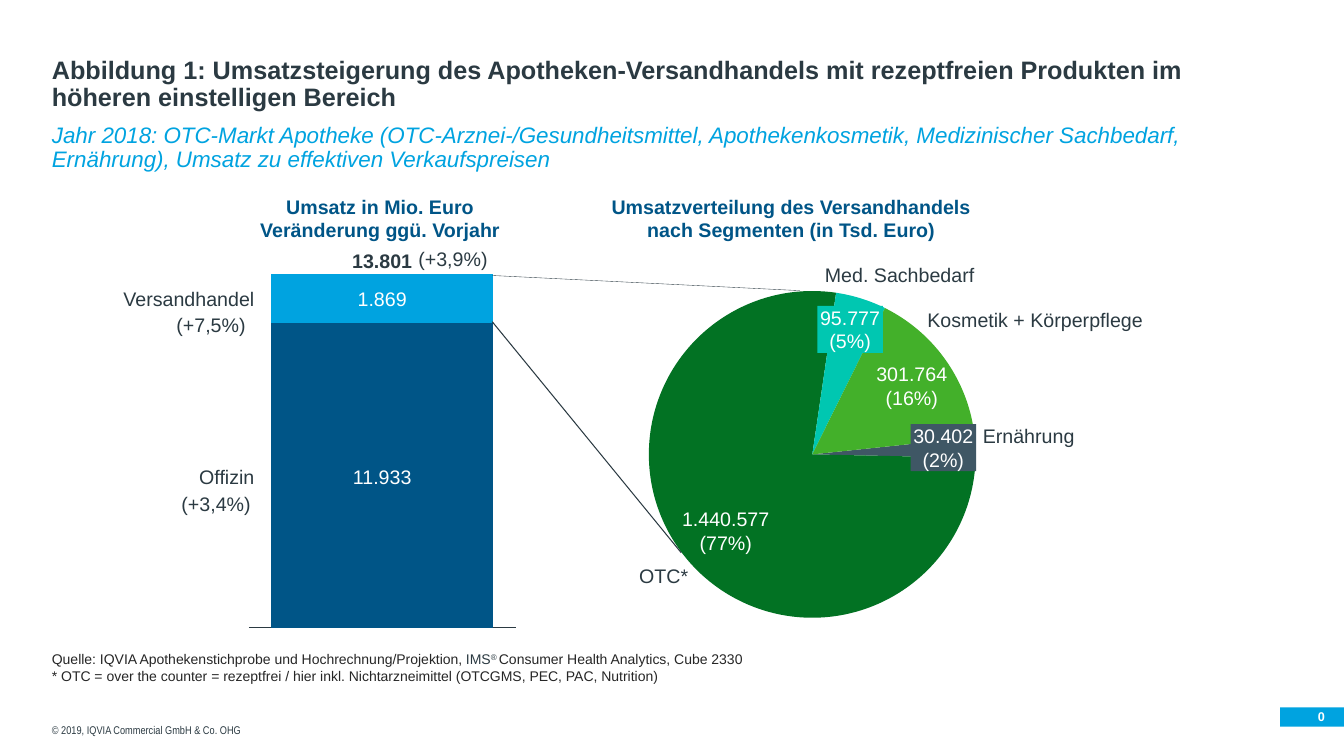
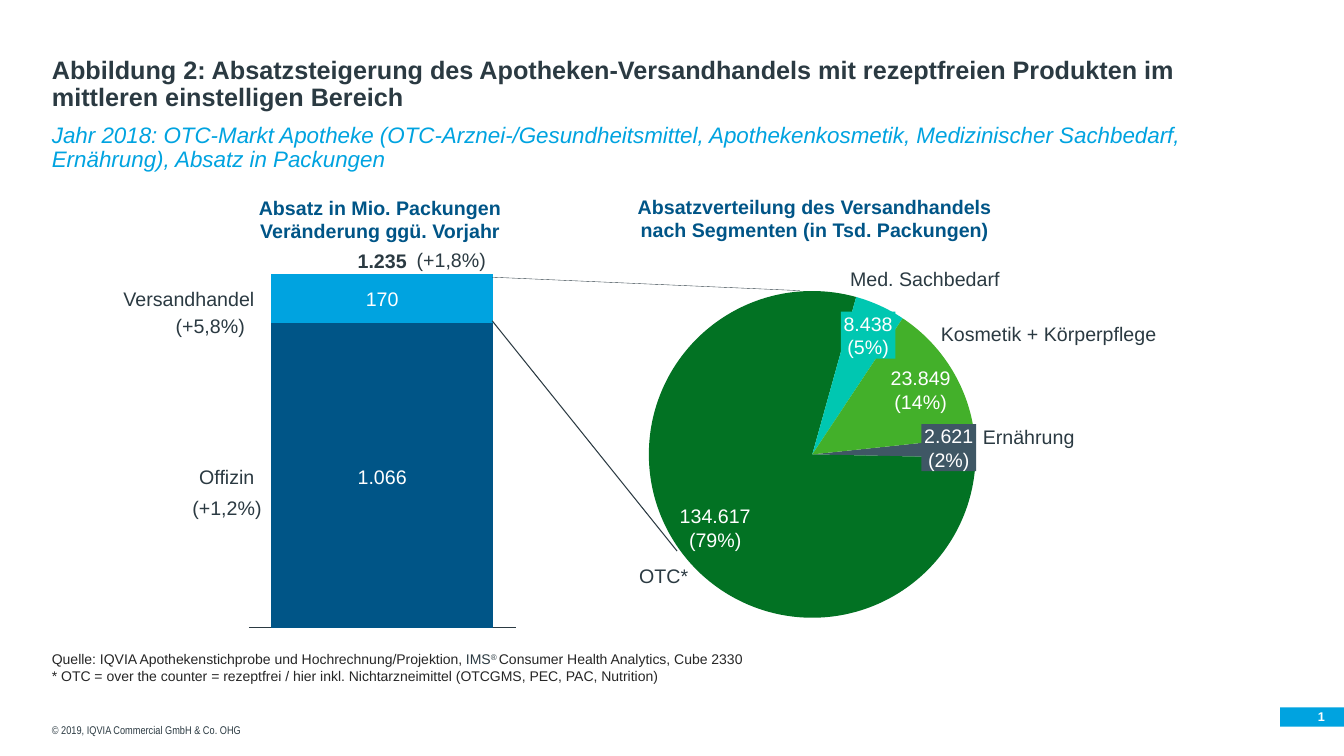
import dataclasses

import pptx
import pptx.chart.data
import pptx.dml.color
import pptx.enum.chart
import pptx.enum.shapes
import pptx.enum.text
import pptx.oxml
import pptx.oxml.ns
import pptx.util

COLUMNS, ROWS = 160, 90
WIDTH, HEIGHT = pptx.util.Inches(13.33), pptx.util.Inches(7.5)
DARK, GREY, WHITE = "2B3A42", "262626", "FFFFFF"
SKY, NAVY = "00A3E0", "005587"
SLATE, FOREST, TEAL, GREEN = "3F5765", "027223", "00C7B1", "43B02A"
SEGMENT_COLORS = (SLATE, FOREST, TEAL, GREEN)
SEGMENT_NAMES = ("Ernährung", "OTC*", "Med. Sachbedarf", "Kosmetik + Körperpflege")
LINE_ROWS = 2.8
ALIGN = pptx.enum.text.PP_ALIGN
ANCHOR = pptx.enum.text.MSO_ANCHOR


@dataclasses.dataclass(frozen=True)
class Box:
    """An area in grid columns and rows."""

    left: float
    top: float
    width: float
    height: float

    def inside(self, left, top, width, height):
        """Return an area placed from this area's top left corner."""
        return Box(self.left + left, self.top + top, width, height)

    def lengths(self):
        """Return the area as slide lengths."""
        return (across(self.left), down(self.top),
                across(self.width), down(self.height))


TITLE = Box(5, 3.8, 148.8, 10.1)
SUBTITLE = Box(5, 14.2, 148.8, 5.3)
SOURCE = Box(5, 76.9, 115.2, 4.7)
COPYRIGHT = Box(5, 83.9, 119.6, 4.4)
BADGE = Box(152.4, 84.2, 7.6, 2.3)
BARS = Box(28.6, 31.7, 33.8, 44.4)
PIE = Box(76, 33.4, 41.4, 41.4)


@dataclasses.dataclass(frozen=True)
class Change:
    """A growth figure and its place in the column region."""

    text: str
    left: float
    top: float


@dataclasses.dataclass(frozen=True)
class Segment:
    """A pie segment with the places of its value and its name."""

    share: int
    value: str
    value_place: tuple
    name_place: tuple


def across(columns):
    """Turn grid columns into a length."""
    return round(WIDTH * columns / COLUMNS)


def down(rows):
    """Turn grid rows into a length."""
    return round(HEIGHT * rows / ROWS)


def color(value):
    """Turn a hex string into a colour."""
    return pptx.dml.color.RGBColor.from_string(value)


def paint(fill, value):
    """Give a fill one solid colour."""
    fill.solid()
    fill.fore_color.rgb = color(value)


def add_run(paragraph, text, size=14, ink=DARK, bold=False, italic=False,
            name="Arial"):
    """Add one styled run and return it."""
    run = paragraph.add_run()
    run.text = text
    run.font.size = pptx.util.Pt(size)
    run.font.name = name
    run.font.bold = bold
    run.font.italic = italic
    run.font.color.rgb = color(ink)
    return run


def add_text(slide, box, lines, align=ALIGN.LEFT, anchor=ANCHOR.MIDDLE, fill=None,
             inset=(0, 0, 0, 0), spacing=None, **style):
    """Add lines of text, on a filled rectangle if a fill is given."""
    if fill:
        shape = slide.shapes.add_shape(
            pptx.enum.shapes.MSO_SHAPE.RECTANGLE, *box.lengths())
        shape.shadow.inherit = False
        paint(shape.fill, fill)
        shape.line.fill.background()
    else:
        shape = slide.shapes.add_textbox(*box.lengths())
    frame = shape.text_frame
    frame.word_wrap = True
    frame.vertical_anchor = anchor
    (frame.margin_left, frame.margin_top,
     frame.margin_right, frame.margin_bottom) = map(pptx.util.Inches, inset)
    for index, line in enumerate(lines):
        paragraph = frame.add_paragraph() if index else frame.paragraphs[0]
        paragraph.alignment = align
        if spacing:
            paragraph.line_spacing = spacing
        add_run(paragraph, line, **style)
    return shape


def add_line(slide, start, end, weight):
    """Add a straight line between two grid points."""
    line = slide.shapes.add_connector(
        pptx.enum.shapes.MSO_CONNECTOR.STRAIGHT,
        across(start[0]), down(start[1]), across(end[0]), down(end[1]))
    line.line.color.rgb = color(DARK)
    line.line.width = pptx.util.Pt(weight)
    properties = line.element.spPr
    properties.append(pptx.oxml.parse_xml(
        f'<a:effectLst {pptx.oxml.ns.nsdecls("a")}/>'))


def add_chart(slide, box, kind, categories, series, plot_area):
    """Add a plain chart with a fixed inner plot area."""
    data = pptx.chart.data.CategoryChartData()
    data.categories = categories
    for index, values in enumerate(series, 1):
        data.add_series(f"Series {index}", values)
    chart = slide.shapes.add_chart(kind, *box.lengths(), data).chart
    chart.has_legend = False
    chart.has_title = False
    chart.font.name = "Arial"
    chart.font.size = pptx.util.Pt(10)
    chart.font.color.rgb = color(DARK)
    area = chart.element.xpath("//c:plotArea")[0]
    for layout in area.xpath("./c:layout"):
        area.remove(layout)
    settings = [("layoutTarget", "inner"), ("xMode", "edge"), ("yMode", "edge")]
    settings += zip("xywh", plot_area)
    inner = "".join(f'<c:{tag} val="{value}"/>' for tag, value in settings)
    area.insert(0, pptx.oxml.parse_xml(
        f'<c:layout {pptx.oxml.ns.nsdecls("c")}>'
        f'<c:manualLayout>{inner}</c:manualLayout></c:layout>'))
    return chart


def add_frame(slide, title, subtitle, number):
    """Add the title, subtitle, source, copyright line and number badge."""
    inset = (0.1, 0.05, 0.1, 0.05)
    add_text(slide, SUBTITLE, [subtitle], anchor=ANCHOR.TOP, inset=inset,
             spacing=0.9, size=16, ink=SKY, italic=True)
    add_text(slide, TITLE, [title], anchor=ANCHOR.BOTTOM, inset=inset,
             spacing=0.9, size=18, bold=True)
    add_text(slide, COPYRIGHT, ["© 2019, IQVIA Commercial GmbH & Co. OHG"],
             anchor=ANCHOR.BOTTOM, fill=WHITE, inset=inset, size=8,
             name="Arial Narrow")
    add_text(slide, BADGE, [str(number)], ALIGN.RIGHT, fill=SKY,
             inset=(0, 0, 0.19, 0), size=9, ink=WHITE, bold=True)
    source = add_text(
        slide, SOURCE,
        ["Quelle: IQVIA Apothekenstichprobe und Hochrechnung/Projektion, ",
         "* OTC = over the counter = rezeptfrei / hier inkl. Nichtarzneimittel "
         "(OTCGMS, PEC, PAC, Nutrition)"],
        anchor=ANCHOR.TOP, inset=inset, size=10, ink=GREY)
    paragraph = source.text_frame.paragraphs[0]
    add_run(paragraph, "IMS", size=10)
    mark = add_run(paragraph, "® ", size=10)
    mark.font._element.set("baseline", "30000")
    add_run(paragraph, "Consumer Health Analytics, Cube 2330", size=10, ink=GREY)


def add_columns(slide, box, headline, headline_top, values, total, changes):
    """Add the stacked column with its headline, values and growth figures."""
    chart = add_chart(slide, box, pptx.enum.chart.XL_CHART_TYPE.COLUMN_STACKED,
                      ["1"], [[100], [16]], (0.03, 0.02, 0.94, 0.95))
    plot = chart.plots[0]
    plot.gap_width, plot.overlap, plot.vary_by_categories = 20, 100, False
    for series, fill in zip(plot.series, (NAVY, SKY)):
        paint(series.format.fill, fill)
    chart.value_axis.visible = False
    chart.value_axis.has_major_gridlines = False
    chart.value_axis.minimum_scale, chart.value_axis.maximum_scale = 0, 116
    axis = chart.category_axis
    axis.tick_label_position = pptx.enum.chart.XL_TICK_LABEL_POSITION.NONE
    axis.major_tick_mark = pptx.enum.chart.XL_TICK_MARK.NONE
    axis.format.line.color.rgb = color(DARK)
    axis.format.line.width = pptx.util.Pt(0.75)
    add_text(slide, box.inside(-5.3, headline_top, 43.9, 2 * LINE_ROWS),
             [headline, "Veränderung ggü. Vorjahr"], ALIGN.CENTER, ANCHOR.TOP,
             ink=NAVY, bold=True)
    for name, value, top in zip(("Versandhandel", "Offizin"), values, (2.5, 23.6)):
        add_text(slide, box.inside(0, top, box.width, LINE_ROWS), [value],
                 ALIGN.CENTER, ink=WHITE)
        add_text(slide, box.inside(-15.3, top, 17, LINE_ROWS), [name], ALIGN.RIGHT)
    add_text(slide, box.inside(0, -2.1, box.width, LINE_ROWS), [total],
             ALIGN.CENTER, ANCHOR.BOTTOM, bold=True)
    for change in changes:
        add_text(slide, box.inside(change.left, change.top, 10, LINE_ROWS),
                 [change.text])


def add_pie(slide, box, headline, headline_left, segments):
    """Add the pie with its headline, values and segment names."""
    chart = add_chart(slide, box, pptx.enum.chart.XL_CHART_TYPE.PIE, list("1234"),
                      [[segment.share for segment in segments]],
                      (0.03, 0.03, 0.94, 0.94))
    pie = chart.element.xpath("//c:pieChart")[0]
    for angle in pie.xpath("./c:firstSliceAng"):
        pie.remove(angle)
    pie.append(pptx.oxml.parse_xml(
        f'<c:firstSliceAng {pptx.oxml.ns.nsdecls("c")} val="84"/>'))
    series = chart.plots[0].series[0]
    add_text(slide, box.inside(headline_left, -10.2, 43.6, 2 * LINE_ROWS), [headline],
             ALIGN.CENTER, ANCHOR.TOP, ink=NAVY, bold=True)
    for index, segment in enumerate(segments):
        fill = SEGMENT_COLORS[index]
        point = series.points[index].format
        paint(point.fill, fill)
        point.line.fill.background()
        add_text(slide, box.inside(*segment.value_place, 2 * LINE_ROWS),
                 [segment.value, f"({segment.share}%)"], ALIGN.CENTER,
                 fill=fill if fill in (SLATE, TEAL) else None, ink=WHITE)
        add_text(slide, box.inside(*segment.name_place, 27, LINE_ROWS),
                 [SEGMENT_NAMES[index]])


def add_figure(presentation, number, title, subtitle, columns, pie, lines):
    """Add one slide that breaks a column down into a pie."""
    slide = presentation.slides.add_slide(presentation.slide_layouts[6])
    add_frame(slide, title, subtitle, number)
    add_columns(slide, BARS, *columns)
    add_pie(slide, PIE, *pie)
    for (start, end), weight in zip(lines, (0.75, 0.25)):
        add_line(slide, start, end, weight)


def main():
    """Build and save the presentation."""
    presentation = pptx.Presentation()
    presentation.slide_width, presentation.slide_height = WIDTH, HEIGHT
    market = ("Jahr 2018: OTC-Markt Apotheke (OTC-Arznei-/Gesundheitsmittel, "
              "Apothekenkosmetik, Medizinischer Sachbedarf, Ernährung), ")
    heading = "steigerung des Apotheken-Versandhandels mit rezeptfreien Produkten im "
    split = "verteilung des Versandhandels nach Segmenten (in Tsd. "
    add_figure(
        presentation, 0,
        f"Abbildung 1: Umsatz{heading}höheren einstelligen Bereich",
        f"{market}Umsatz zu effektiven Verkaufspreisen",
        ("Umsatz in Mio. Euro", -8.5, ("1.869", "11.933"), "13.801",
         (Change("(+7,5%)", -7.6, 5.6), Change("(+3,4%)", -7, 26.9),
          Change("(+3,9%)", 21.2, -2.3))),
        (f"Umsatz{split}Euro)", -3.6,
         (Segment(2, "30.402", (32.4, 17.1, 7.8), (41, 17.1)),
          Segment(77, "1.440.577", (4.9, 27, 11), (0.1, 33.7)),
          Segment(5, "95.777", (21.3, 3, 7.8), (22.2, -2.1)),
          Segment(16, "301.764", (28, 9.7, 9.1), (34.4, 3.3)))),
        (((58.6, 38.3), (81.1, 65.8)), ((58.6, 32.8), (95.2, 34.6))))
    add_figure(
        presentation, 1,
        f"Abbildung 2: Absatz{heading}mittleren einstelligen Bereich",
        f"{market}Absatz in Packungen",
        ("Absatz in Mio. Packungen", -8.4, ("170", "1.066"), "1.235",
         (Change("(+5,8%)", -7.7, 5.7), Change("(+1,2%)", -5.7, 27.3),
          Change("(+1,8%)", 21, -2.2))),
        (f"Absatz{split}Packungen)", -0.8,
         (Segment(2, "2.621", (33.7, 17.1, 6.5), (41, 17.2)),
          Segment(79, "134.617", (4.6, 26.6, 9.1), (0.1, 33.7)),
          Segment(5, "8.438", (24.1, 3.7, 6.5), (25.2, -1.6)),
          Segment(14, "23.849", (29.7, 10.2, 7.8), (36, 4.9)))),
        (((58.6, 38.2), (80.6, 65.6)), ((58.6, 33), (95.2, 34.6))))
    presentation.save("out.pptx")


if __name__ == "__main__":
    main()
